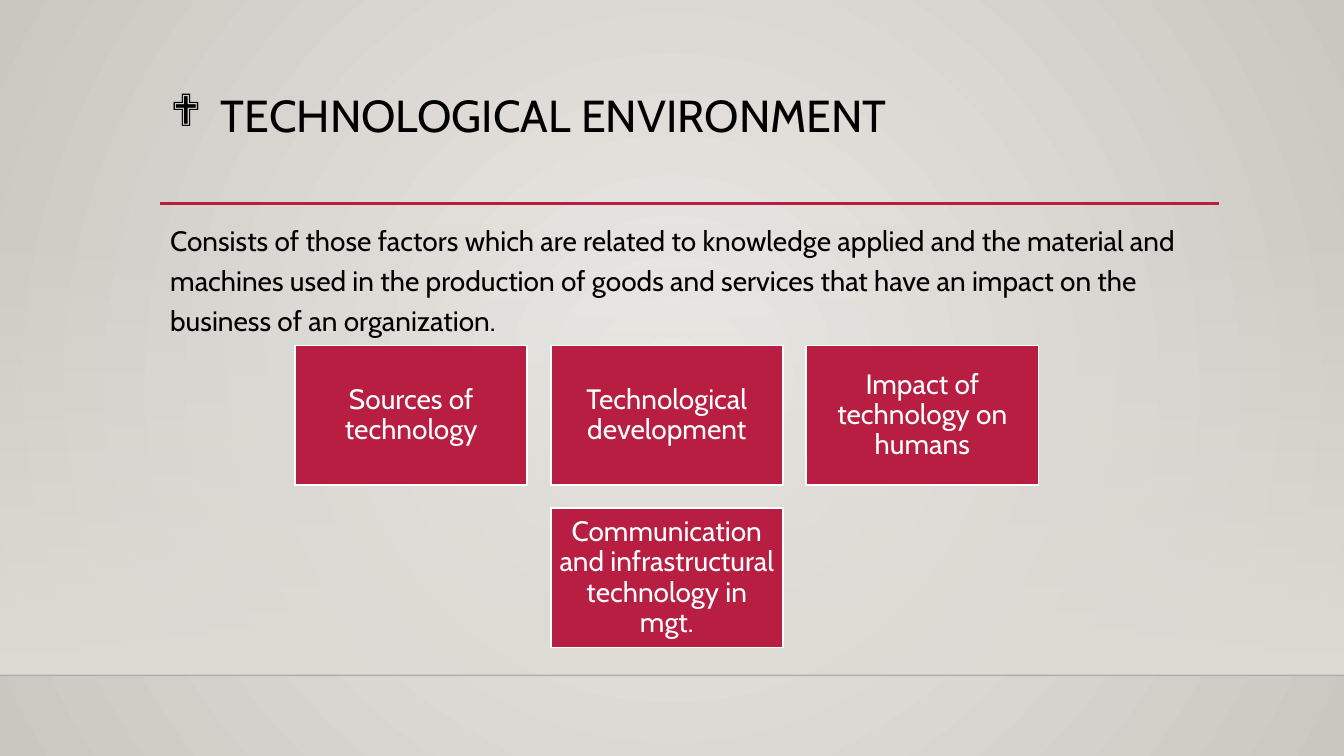
"""Build the slide on the technological environment."""
import lxml.etree
import pptx
import pptx.dml.color
import pptx.enum.shapes
import pptx.enum.text
import pptx.oxml
import pptx.oxml.ns
import pptx.util

Cm = pptx.util.Cm
Pt = pptx.util.Pt
qn = pptx.oxml.ns.qn
ALIGN = pptx.enum.text.PP_ALIGN
ANCHOR = pptx.enum.text.MSO_ANCHOR

FONT = "Cabin"
COLORS = {
    "centre": "ECEAE7", "edge": "CAC7C1", "floor": "DFDBD5", "rule": "000001",
    "accent": "B71E42", "text": "000000", "white": "FFFFFF",
}
SLIDE_WIDTH, SLIDE_HEIGHT = 33.87, 19.05
TITLE = "TECHNOLOGICAL ENVIRONMENT"
DEFINITION = (
    "Consists of those factors which are related to knowledge applied and the "
    "material and machines used in the production of goods and services that "
    "have an impact on the business of an organization."
)
FACTORS = {
    (0, 0): "Sources of technology",
    (0, 1): "Technological development",
    (0, 2): "Impact of technology on humans",
    (1, 1): "Communication and infrastructural technology in mgt.",
}
GRID_LEFT, GRID_TOP = 7.44, 8.71
BOX_WIDTH, BOX_HEIGHT, GAP = 5.85, 3.51, 0.59
RADIAL = '<a:path path="circle"><a:fillToRect l="50000" t="50000" r="50000" b="50000"/></a:path>'
DOWNWARD = '<a:lin ang="5400000" scaled="0"/>'


def color(name):
    """Return the named colour."""
    return pptx.dml.color.RGBColor.from_string(COLORS[name])


def set_gradient(fill, element, stops, direction):
    """Give a fill gradient stops of (position, colour, opacity) and a direction."""
    fill.gradient()
    stop_xml = "".join(
        f'<a:gs pos="{position * 1000}"><a:srgbClr val="{COLORS[name]}">'
        f'<a:alpha val="{opacity * 1000}"/></a:srgbClr></a:gs>'
        for position, name, opacity in stops
    )
    source = pptx.oxml.parse_xml(
        f'<a:gradFill {pptx.oxml.ns.nsdecls("a")}>'
        f"<a:gsLst>{stop_xml}</a:gsLst>{direction}</a:gradFill>"
    )
    gradient = element.find(".//" + qn("a:gradFill"))
    gradient.getparent().replace(gradient, source)


def write_text(text_frame, text, size, name, **paragraph_format):
    """Write one formatted paragraph in a wrapped text frame."""
    text_frame.word_wrap = True
    text_frame.auto_size = pptx.enum.text.MSO_AUTO_SIZE.NONE
    paragraph = text_frame.paragraphs[0]
    paragraph.text = text
    for attribute, value in paragraph_format.items():
        setattr(paragraph, attribute, value)
    for attribute, value in {"name": FONT, "size": Pt(size)}.items():
        setattr(paragraph.runs[0].font, attribute, value)
    paragraph.runs[0].font.color.rgb = color(name)
    return paragraph


def add_rectangle(slide, left, top, width, height):
    """Add a rectangle without a shadow."""
    shape = slide.shapes.add_shape(
        pptx.enum.shapes.MSO_SHAPE.RECTANGLE, Cm(left), Cm(top), Cm(width), Cm(height)
    )
    shape.shadow.inherit = False
    return shape


def add_rule(slide, left, right, top, name, width, opacity=100):
    """Add a horizontal line."""
    connector = slide.shapes.add_connector(
        pptx.enum.shapes.MSO_CONNECTOR.STRAIGHT, Cm(left), Cm(top), Cm(right), Cm(top)
    )
    connector.line.width = Pt(width)
    connector.line.color.rgb = color(name)
    properties = connector._element.spPr
    lxml.etree.SubElement(properties, qn("a:effectLst"))
    if opacity < 100:
        shade = properties.find(".//" + qn("a:srgbClr"))
        lxml.etree.SubElement(shade, qn("a:alpha"), val=str(opacity * 1000))


def add_background(slide):
    """Add the radial background, the floor and its edge."""
    fill = slide.background.fill
    set_gradient(fill, slide._element, [(0, "centre", 100), (100, "edge", 100)], RADIAL)
    floor = add_rectangle(slide, 0, 5.61, SLIDE_WIDTH, 11.41)
    floor.line.fill.background()
    set_gradient(floor.fill, floor._element, [(0, "floor", 0), (100, "floor", 100)], DOWNWARD)
    add_rule(slide, 0, SLIDE_WIDTH, 17.02, "rule", 1, 20)


def add_title(slide):
    """Place the title with its diamond bullet."""
    title = slide.shapes.title
    place = {"left": 4.04, "top": 2.24, "width": 26.67, "height": 2.69}
    for attribute, value in place.items():
        setattr(title, attribute, Cm(value))
    title.text_frame.vertical_anchor = ANCHOR.TOP
    paragraph = write_text(
        title.text_frame, TITLE, 32, "text", alignment=ALIGN.LEFT, line_spacing=0.9
    )
    properties = paragraph._p.get_or_add_pPr()
    properties.set("marL", str(Cm(1.27)))
    properties.set("indent", str(Cm(-1.27)))
    lxml.etree.SubElement(properties, qn("a:buFont"), typeface="Wingdings")
    lxml.etree.SubElement(properties, qn("a:buChar"), char="❖")


def add_definition(slide):
    """Add the definition below the title."""
    box = slide.shapes.add_textbox(Cm(4.04), Cm(5.33), Cm(26.67), Cm(3.3))
    write_text(box.text_frame, DEFINITION, 20, "text", line_spacing=1.2)


def add_factor(slide, row, column, text):
    """Add one factor box at its grid cell."""
    left = GRID_LEFT + column * (BOX_WIDTH + GAP)
    top = GRID_TOP + row * (BOX_HEIGHT + GAP)
    shape = add_rectangle(slide, left, top, BOX_WIDTH, BOX_HEIGHT)
    shape.fill.solid()
    shape.fill.fore_color.rgb = color("accent")
    shape.line.color.rgb = color("white")
    shape.line.width = Pt(1.25)
    for side in ("left", "top", "right", "bottom"):
        setattr(shape.text_frame, f"margin_{side}", Cm(0.19))
    shape.text_frame.vertical_anchor = ANCHOR.MIDDLE
    write_text(shape.text_frame, text, 20, "white", alignment=ALIGN.CENTER, line_spacing=0.9)


def main():
    """Build and save the presentation."""
    presentation = pptx.Presentation()
    presentation.slide_width = Cm(SLIDE_WIDTH)
    presentation.slide_height = Cm(SLIDE_HEIGHT)
    slide = presentation.slides.add_slide(presentation.slide_layouts.get_by_name("Title Only"))
    add_background(slide)
    add_rule(slide, 4.04, 30.73, 5.13, "accent", 2.5)
    add_title(slide)
    add_definition(slide)
    for (row, column), text in FACTORS.items():
        add_factor(slide, row, column, text)
    presentation.save("out.pptx")


if __name__ == "__main__":
    main()
